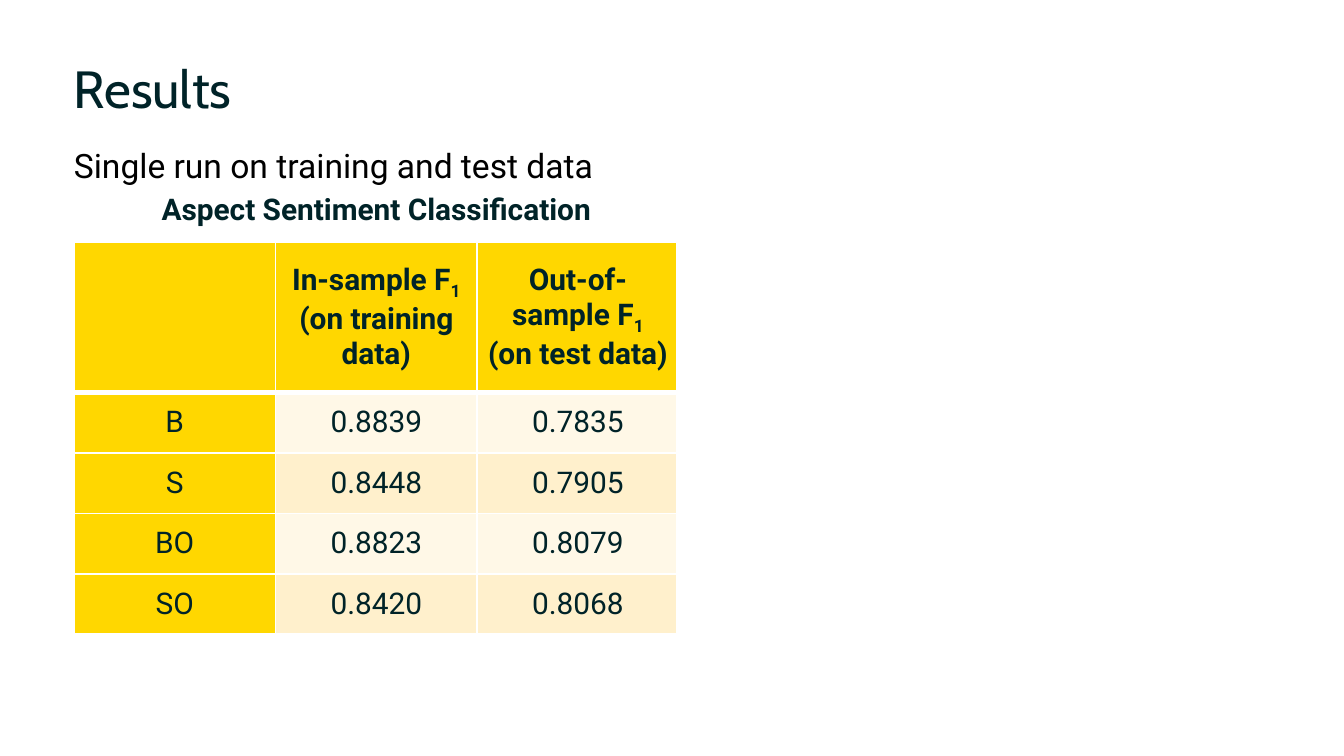
from lxml.etree import SubElement
from pptx import Presentation
from pptx.dml.color import RGBColor
from pptx.enum.text import MSO_ANCHOR as Anchor, PP_ALIGN as Align
from pptx.oxml.ns import qn
from pptx.util import Inches, Pt

COLORS = {
    "ink": "002328",
    "black": "000000",
    "white": "FFFFFF",
    "gold": "FFD700",
    "cream": "FFF8E7",
    "sand": "FFF0CC",
}
LEFT = 0.545
LEFT = 0.55
COLUMN_WIDTH = 1.5
ROW_HEIGHTS = [0.47, 1.12] + [0.45] * 4
HEADINGS = [
    ("In-sample F", "(on training data)"),
    ("Out-of-sample F", "(on test data)"),
]
SCORES = [
    ("B", "0.8839", "0.7835"),
    ("S", "0.8448", "0.7905"),
    ("BO", "0.8823", "0.8079"),
    ("SO", "0.8420", "0.8068"),
]


class ResultsSlide:
    def __init__(self, deck):
        self.slide = deck.slides.add_slide(deck.slide_layouts[6])
        self.body_font = "Roboto"
        self.title_font = "Cabin"

    def style(self, para, size, color, font, bold=False):
        para.font.size = Pt(size)
        para.font.name = font
        para.font.bold = bold
        para.font.color.rgb = RGBColor.from_string(COLORS[color])

    def text(self, words, top, height, size, spacing, color, font):
        box = self.slide.shapes.add_textbox(
            Inches(LEFT), Inches(top), Inches(8.94), Inches(height))
        frame = box.text_frame
        frame.word_wrap = True
        frame.margin_left = frame.margin_right = 0
        frame.margin_top = frame.margin_bottom = 0
        para = frame.paragraphs[0]
        para.text = words
        para.line_spacing = Pt(spacing)
        self.style(para, size, color, font)

    def table(self, row_heights, column_count):
        table = self.slide.shapes.add_table(
            len(row_heights), column_count, Inches(LEFT), Inches(1.33),
            Inches(COLUMN_WIDTH * column_count), Inches(sum(row_heights))).table
        for column in table.columns:
            column.width = Inches(COLUMN_WIDTH)
        for row, height in zip(table.rows, row_heights):
            row.height = Inches(height)
        return table

    def cell(self, cell, fill, bold=False, top=1, bottom=1, right=1):
        """Style a table cell, with border widths in points; return its paragraph."""
        properties = cell._tc.get_or_add_tcPr()
        for side, width in (("L", 1), ("R", right), ("T", top), ("B", bottom)):
            line = SubElement(properties, qn(f"a:ln{side}"), w=str(Pt(width)))
            solid = SubElement(line, qn("a:solidFill"))
            SubElement(solid, qn("a:srgbClr"), val=COLORS["white"])
        cell.fill.solid()
        cell.fill.fore_color.rgb = RGBColor.from_string(COLORS[fill])
        cell.vertical_anchor = Anchor.MIDDLE
        cell.margin_left = cell.margin_right = Inches(0.07)
        cell.margin_top = cell.margin_bottom = Inches(0.04)
        para = cell.text_frame.paragraphs[0]
        para.alignment = Align.CENTER
        self.style(para, 16, "ink", self.body_font, bold)
        return para

    def score_heading(self, para, measure, source):
        para.add_run().text = measure
        subscript = para.add_run()
        subscript.text = "1"
        subscript._r.get_or_add_rPr().set("baseline", "-25000")
        para.add_line_break()
        para.add_run().text = source


def main():
    deck = Presentation()
    deck.slide_width = Inches(10)
    deck.slide_height = deck.slide_width * 9 // 16
    page = ResultsSlide(deck)

    table = page.table(ROW_HEIGHTS, 3)
    table.cell(0, 0).merge(table.cell(0, 2))
    caption = page.cell(table.cell(0, 0), "white", bold=True, right=3)
    caption.text = "Aspect Sentiment Classification"

    page.cell(table.cell(1, 0), "gold", bold=True, bottom=3)
    for column, (measure, source) in enumerate(HEADINGS, start=1):
        para = page.cell(table.cell(1, column), "gold", bold=True, bottom=3,
                         right=3 if column == 2 else 1)
        page.score_heading(para, measure, source)

    for row, values in enumerate(SCORES, start=2):
        band = "sand" if row % 2 else "cream"
        for column, value in enumerate(values):
            para = page.cell(
                table.cell(row, column), band if column else "gold",
                top=3 if row == 2 else 1, right=3 if column == 2 else 1)
            para.text = value

    page.text("Results", 0.44, 0.63, 28, 32, "ink", page.title_font)
    page.text("Single run on training and test data", 1.06, 0.35, 18, 23,
              "black", page.body_font)
    deck.save("out.pptx")


if __name__ == "__main__":
    main()
